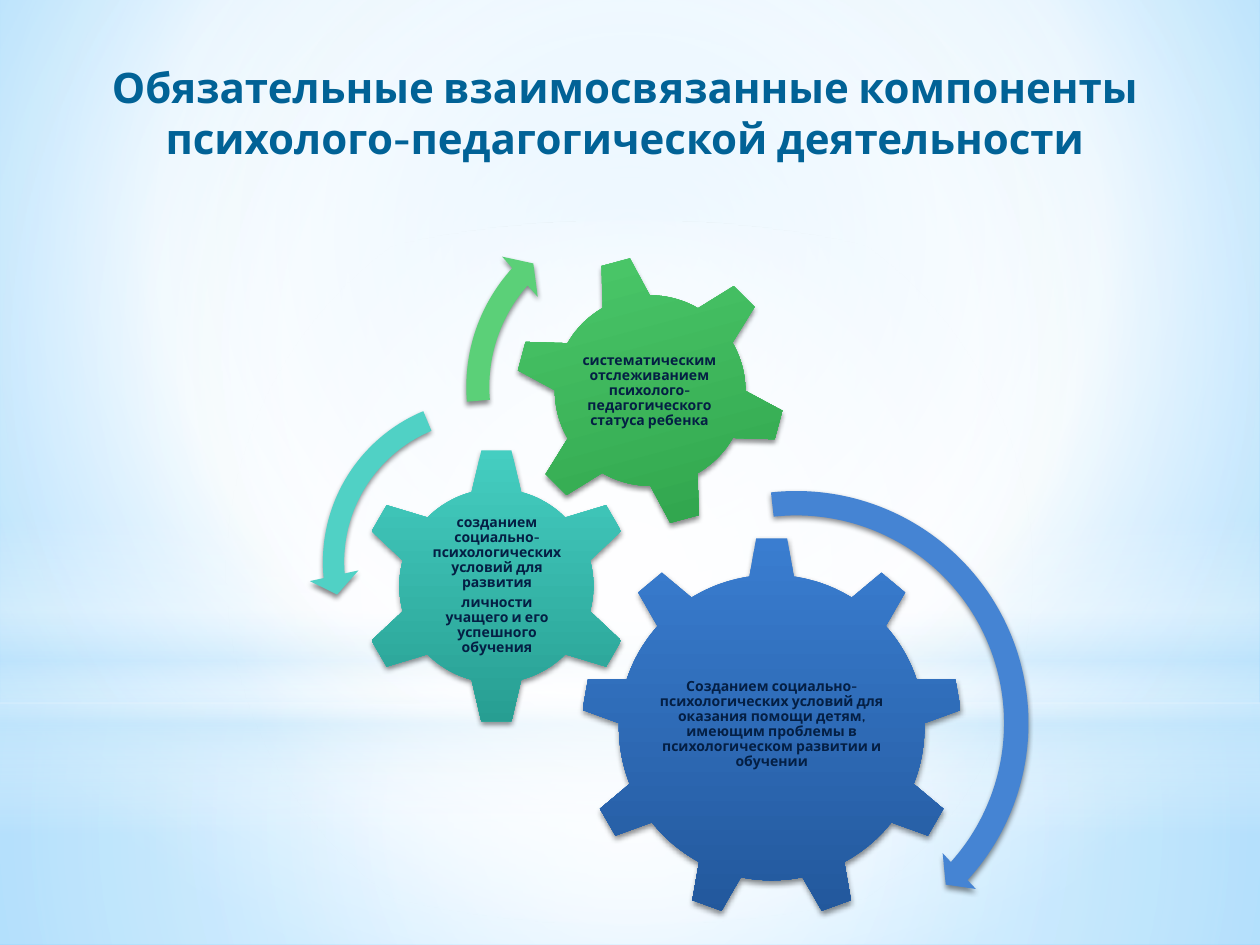
"""Build the slide on the linked components of psychological and pedagogical work."""
from dataclasses import dataclass
from typing import NamedTuple, Optional

from lxml.etree import SubElement
from pptx import Presentation
from pptx.dml.color import RGBColor
from pptx.enum.shapes import MSO_SHAPE as Preset
from pptx.enum.text import MSO_ANCHOR as Anchor, PP_ALIGN as Align
from pptx.oxml import parse_xml
from pptx.oxml.ns import nsdecls, qn
from pptx.util import Emu, Pt

EMU_PER_PX = 9144


class Box(NamedTuple):
    left: int
    top: int
    width: int
    height: int


class Stop(NamedTuple):
    percent: int
    color: str
    opacity: int = 100


class Gradient(NamedTuple):
    stops: list[Stop]
    focus: Optional[tuple[int, int, int, int]] = None


@dataclass(frozen=True)
class Theme:
    font: str = "Cabin"
    title_color: str = "016296"
    label_color: str = "041F44"
    shadow: str = "000000"
    white: str = "FFFFFF"
    haze: str = "C6E7FC"
    sky: str = "B0E0FF"
    deep_sky: str = "6BC5FF"
    title_size: float = 24
    label_size: float = 8
    label_gap: float = 2.8


@dataclass(frozen=True)
class Glow:
    preset: Preset
    box: Box
    gradient: Gradient


@dataclass(frozen=True)
class Gear:
    preset: Preset
    box: Box
    top_color: str
    bottom_color: str
    label_box: Box
    label: list[str]
    rotation: int = 0


@dataclass(frozen=True)
class Arrow:
    preset: Preset
    box: Box
    color: str
    adjustments: list[float]


THEME = Theme()
CENTRE = (50, 50, 50, 50)
TITLE = "Обязательные взаимосвязанные компоненты психолого-педагогической деятельности"
TITLE_BOX = Box(67, 44, 858, 118)
BACKDROP = Gradient([Stop(0, THEME.sky), Stop(60, THEME.white), Stop(100, THEME.deep_sky)],
                    (20, 10, 20, 60))
GLOWS = [
    Glow(Preset.RECTANGLE, Box(0, 558, 1000, 192), Gradient(
        [Stop(0, THEME.white, 91), Stop(37, THEME.white, 76), Stop(100, THEME.haze, 79)], CENTRE)),
    Glow(Preset.RECTANGLE, Box(0, 0, 1000, 558), Gradient(
        [Stop(0, THEME.white, 89), Stop(48, THEME.white, 62), Stop(100, THEME.haze, 79)], CENTRE)),
    Glow(Preset.RECTANGLE, Box(0, 412, 1000, 250), Gradient(
        [Stop(0, THEME.white, 0), Stop(29, THEME.white, 30), Stop(45, THEME.haze, 40),
         Stop(55, THEME.white, 26), Stop(65, THEME.haze, 60), Stop(100, THEME.white, 0)])),
    Glow(Preset.OVAL, Box(0, 175, 1000, 558), Gradient(
        [Stop(0, THEME.white), Stop(56, THEME.white, 0)], CENTRE)),
]
GEARS = [
    Gear(Preset.GEAR_9, Box(461, 426, 303, 303), "3A7DD0", "22589C", Box(522, 497, 181, 156),
         ["Созданием социально-психологических условий для оказания помощи детям, "
          "имеющим проблемы в психологическом развитии и обучении"]),
    Gear(Preset.GEAR_6, Box(284, 355, 220, 220), "45CEC1", "279E92", Box(340, 410, 109, 109),
         ["созданием социально-психологических условий для развития",
          "личности учащего и его успешного обучения"]),
    Gear(Preset.GEAR_6, Box(408, 202, 216, 216), "4FCD6E", "2C9F48", Box(455, 250, 121, 121),
         ["систематическим отслеживанием психолого-педагогического статуса ребенка"], 345),
]
ARROWS = [
    Arrow(Preset.CIRCULAR_ARROW, Box(438, 380, 388, 388), "4584D3",
          [0.05, 2.99, 25.33, 158.25, 0.05]),
    Arrow(Preset.LEFT_CIRCULAR_ARROW, Box(245, 305, 282, 282), "50D1C5",
          [0.06, 4.3, 104.89, 148.38, 0.07]),
    Arrow(Preset.CIRCULAR_ARROW, Box(358, 155, 304, 304), "5BD078",
          [0.06, 3.94, 133.14, 105.08, 0.07]),
]


def emu(px: int) -> Emu:
    return Emu(px * EMU_PER_PX)


def set_all(target, values: dict) -> None:
    for key, value in values.items():
        setattr(target, key, value)


def fill_gradient(fill, owner, gradient: Gradient) -> None:
    fill.gradient()
    stops = "".join(
        f'<a:gs pos="{stop.percent * 1000}"><a:srgbClr val="{stop.color}">'
        f'<a:alpha val="{stop.opacity * 1000}"/></a:srgbClr></a:gs>' for stop in gradient.stops)
    shade = '<a:lin ang="5400000" scaled="0"/>'
    if gradient.focus:
        sides = " ".join(f'{side}="{share * 1000}"' for side, share in zip("ltrb", gradient.focus))
        shade = f'<a:path path="circle"><a:fillToRect {sides}/></a:path>'
    owner.replace(owner.find(qn("a:gradFill")), parse_xml(
        f'<a:gradFill {nsdecls("a")} rotWithShape="1"><a:gsLst>{stops}</a:gsLst>{shade}</a:gradFill>'))


def add_plain(slide, preset: Preset, box: Box):
    shape = slide.shapes.add_shape(preset, *map(emu, box))
    shape.shadow.inherit = False
    shape.line.fill.background()
    return shape


def cast_shadow(shape) -> None:
    effects = shape.element.spPr.find(qn("a:effectLst"))
    shadow = SubElement(effects, qn("a:outerShdw"), blurRad=str(Pt(3.1)), dist=str(Pt(1.8)),
                        dir="5400000", algn="ctr", rotWithShape="0")
    color = SubElement(shadow, qn("a:srgbClr"), val=THEME.shadow)
    SubElement(color, qn("a:alpha"), val="45000")


def write(frame, texts: list[str], size: float, color: str, spacing: dict) -> None:
    for index, text in enumerate(texts):
        paragraph = frame.add_paragraph() if index else frame.paragraphs[0]
        set_all(paragraph, {"alignment": Align.CENTER, **spacing})
        run = paragraph.add_run()
        run.text = text
        set_all(run.font, {"name": THEME.font, "size": Pt(size), "bold": True})
        run.font.color.rgb = RGBColor.from_string(color)


def draw_glow(slide, glow: Glow) -> None:
    shape = add_plain(slide, glow.preset, glow.box)
    fill_gradient(shape.fill, shape.element.spPr, glow.gradient)


def draw_title(slide) -> None:
    title = slide.shapes.title
    set_all(title, dict(zip(Box._fields, map(emu, TITLE_BOX))))
    set_all(title.text_frame, {"word_wrap": True, "vertical_anchor": Anchor.TOP})
    write(title.text_frame, [TITLE], THEME.title_size, THEME.title_color, {"line_spacing": 1.0})
    slide.shapes.element.append(title.element)


def draw_gear(slide, gear: Gear) -> None:
    wheel = add_plain(slide, gear.preset, gear.box)
    wheel.rotation = gear.rotation
    fill_gradient(wheel.fill, wheel.element.spPr,
                  Gradient([Stop(0, gear.top_color), Stop(100, gear.bottom_color)]))
    cast_shadow(wheel)
    frame = slide.shapes.add_textbox(*map(emu, gear.label_box)).text_frame
    margins = {f"margin_{side}": emu(1) for side in ("left", "top", "right", "bottom")}
    set_all(frame, {"word_wrap": True, "vertical_anchor": Anchor.MIDDLE, **margins})
    write(frame, gear.label, THEME.label_size, THEME.label_color,
          {"line_spacing": 0.9, "space_after": Pt(THEME.label_gap)})


def draw_arrow(slide, arrow: Arrow) -> None:
    sweep = add_plain(slide, arrow.preset, arrow.box)
    for index, value in enumerate(arrow.adjustments):
        sweep.adjustments[index] = value
    sweep.fill.solid()
    sweep.fill.fore_color.rgb = RGBColor.from_string(arrow.color)
    cast_shadow(sweep)


def main() -> None:
    deck = Presentation()
    set_all(deck, {"slide_width": emu(1000), "slide_height": emu(750)})
    slide = deck.slides.add_slide(deck.slide_layouts[5])
    backdrop = slide.background.fill
    fill_gradient(backdrop, slide.element.find(".//" + qn("p:bgPr")), BACKDROP)
    for glow in GLOWS:
        draw_glow(slide, glow)
    draw_title(slide)
    for gear in GEARS:
        draw_gear(slide, gear)
    for arrow in ARROWS:
        draw_arrow(slide, arrow)
    deck.save("out.pptx")


if __name__ == "__main__":
    main()
